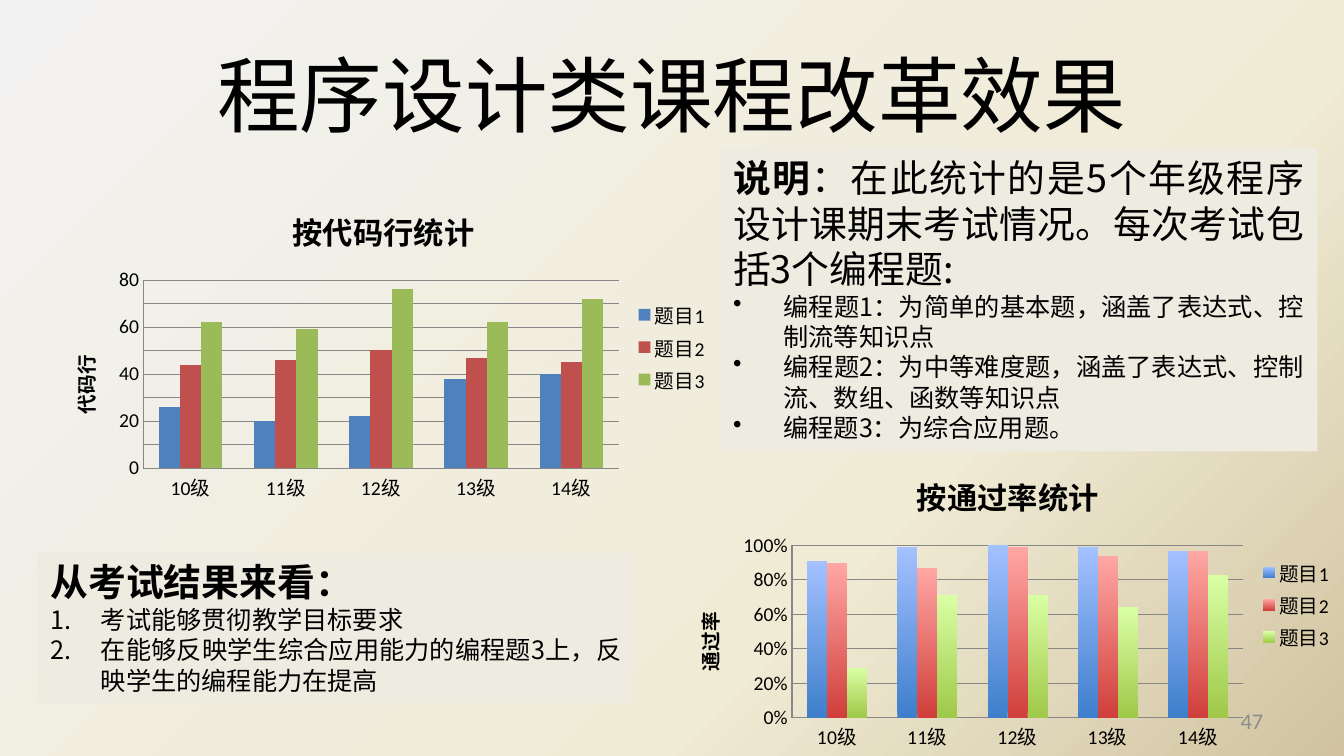
from pptx import Presentation
from pptx.chart.data import CategoryChartData
from pptx.dml.color import RGBColor
from pptx.enum.chart import XL_CHART_TYPE as ChartType, XL_LEGEND_POSITION as LegendPosition, XL_TICK_MARK as TickMark
from pptx.enum.shapes import MSO_SHAPE as Preset
from pptx.enum.text import MSO_ANCHOR as Anchor, MSO_AUTO_SIZE as AutoSize, PP_ALIGN as Align
from pptx.oxml import parse_xml
from pptx.oxml.ns import nsdecls, qn
from pptx.util import Pt

BLACK = RGBColor(0x00, 0x00, 0x00)
GREY = RGBColor(0x8C, 0x8C, 0x8C)
PANEL = RGBColor(0xEE, 0xEC, 0xE1)
SERIES_COLOURS = (RGBColor(0x4F, 0x81, 0xBD), RGBColor(0xC0, 0x50, 0x4D), RGBColor(0x9B, 0xBB, 0x59))

LATIN = "Calibri"
CHINESE = "Noto Sans CJK SC"
BULLET = '<a:buChar %s char="•"/>' % nsdecls("a")
NUMBER = '<a:buAutoNum %s type="arabicPeriod"/>' % nsdecls("a")
BACKGROUND = """<a:gradFill %s rotWithShape="1"><a:gsLst>
<a:gs pos="0"><a:srgbClr val="F2F2F2"/></a:gs>
<a:gs pos="67000"><a:srgbClr val="F0EBD5"><a:alpha val="73000"/></a:srgbClr></a:gs>
<a:gs pos="100000"><a:srgbClr val="D1C39F"/></a:gs>
</a:gsLst><a:path path="circle"><a:fillToRect r="100000" b="100000"/></a:path></a:gradFill>""" % nsdecls("a")

GRADES = ("10级", "11级", "12级", "13级", "14级")
CODE_LINES = {
    "题目1": (26, 20, 22, 38, 40),
    "题目2": (44, 46, 50, 47, 45),
    "题目3": (62, 59, 76, 62, 72),
}
PASS_RATES = {
    "题目1": (0.91, 0.99, 1, 0.99, 0.97),
    "题目2": (0.9, 0.87, 0.99, 0.94, 0.97),
    "题目3": (0.29, 0.71, 0.71, 0.64, 0.83),
}


class SlideBuilder:
    """Holds the style and the current slide, and adds its elements."""

    def __init__(self, slide):
        self.slide = slide

    def background(self):
        self.slide.background.fill.solid()
        properties = self.slide.element.find(".//" + qn("p:bgPr"))
        properties.replace(properties.find(qn("a:solidFill")), parse_xml(BACKGROUND))

    def frame(self, shape, anchor):
        frame = shape.text_frame
        frame.word_wrap = True
        frame.vertical_anchor = anchor
        frame.margin_left = frame.margin_right = Pt(9.6)
        frame.margin_top = frame.margin_bottom = Pt(4.8)
        return frame

    def run(self, paragraph, text, size, colour=BLACK, latin=LATIN, bold=False):
        run = paragraph.add_run()
        run.text = text
        font = run.font
        font.size, font.name, font.bold = Pt(size), latin, bold
        font.color.rgb = colour
        run._r.get_or_add_rPr().append(parse_xml('<a:ea %s typeface="%s"/>' % (nsdecls("a"), CHINESE)))

    def title(self, text, left, top, width, height):
        shape = self.slide.shapes.title
        shape.left, shape.top, shape.width, shape.height = Pt(left), Pt(top), Pt(width), Pt(height)
        frame = self.frame(shape, Anchor.MIDDLE)
        frame.auto_size = AutoSize.NONE
        paragraph = frame.paragraphs[0]
        paragraph.alignment = Align.CENTER
        self.run(paragraph, text, 59)

    def page_number(self, text, left, top, width, height):
        shape = self.slide.shapes.add_textbox(Pt(left), Pt(top), Pt(width), Pt(height))
        paragraph = self.frame(shape, Anchor.MIDDLE).paragraphs[0]
        paragraph.alignment = Align.RIGHT
        self.run(paragraph, text, 16, GREY)

    def panel(self, heading, intro, items, marker, left, top, width, height):
        shape = self.slide.shapes.add_shape(Preset.RECTANGLE, Pt(left), Pt(top), Pt(width), Pt(height))
        shape.shadow.inherit = False
        shape.fill.solid()
        shape.fill.fore_color.rgb = PANEL
        shape.line.fill.background()
        frame = self.frame(shape, Anchor.TOP)
        frame.auto_size = AutoSize.SHAPE_TO_FIT_TEXT
        paragraph = frame.paragraphs[0]
        paragraph.alignment = Align.JUSTIFY
        self.run(paragraph, heading, 27, latin=CHINESE, bold=True)
        if intro:
            self.run(paragraph, intro, 27, latin=CHINESE)
        for item in items:
            paragraph = frame.add_paragraph()
            paragraph.alignment = Align.JUSTIFY
            properties = paragraph._p.get_or_add_pPr()
            properties.set("marL", str(Pt(36)))
            properties.set("indent", str(Pt(-36)))
            properties.append(parse_xml(marker))
            self.run(paragraph, item, 18, latin=CHINESE)

    def chart_title(self, owner, text, size):
        owner.has_title = True
        title = owner.chart_title if hasattr(owner, "chart_title") else owner.axis_title
        run = title.text_frame.paragraphs[0].add_run()
        run.text = text
        run.font.size, run.font.name, run.font.bold = Pt(size), LATIN, True
        run.font.color.rgb = BLACK

    def column_chart(self, title, axis_title, values, number_format, left, top, width, height,
                     maximum=None, shaded=False):
        data = CategoryChartData(number_format=number_format)
        data.categories = GRADES
        for name, numbers in values.items():
            data.add_series(name, numbers)
        chart = self.slide.shapes.add_chart(
            ChartType.COLUMN_CLUSTERED, Pt(left), Pt(top), Pt(width), Pt(height), data).chart
        chart.font.size, chart.font.name = Pt(18), LATIN
        chart.font.color.rgb = BLACK
        self.chart_title(chart, title, 21.6)
        self.chart_title(chart.value_axis, axis_title, 14)
        for axis in (chart.category_axis, chart.value_axis):
            axis.major_tick_mark = axis.minor_tick_mark = TickMark.NONE
            axis.tick_labels.font.size = Pt(14)
        chart.value_axis.has_major_gridlines = True
        chart.value_axis.tick_labels.number_format = number_format
        chart.value_axis.tick_labels.number_format_is_linked = False
        if maximum is not None:
            chart.value_axis.maximum_scale = maximum
        chart.has_legend = True
        chart.legend.position = LegendPosition.RIGHT
        chart.legend.include_in_layout = False
        chart.legend.font.size = Pt(14)
        plot = chart.plots[0]
        plot.gap_width = 150
        plot.vary_by_categories = False
        if shaded:
            chart.chart_style = 26
            return
        for series, colour in zip(plot.series, SERIES_COLOURS):
            series.format.fill.solid()
            series.format.fill.fore_color.rgb = colour


def main():
    presentation = Presentation()
    presentation.slide_width, presentation.slide_height = Pt(960), Pt(540)
    builder = SlideBuilder(presentation.slides.add_slide(presentation.slide_layouts[5]))
    builder.background()
    builder.title("程序设计类课程改革效果", 48, 21.6, 864, 90)
    builder.page_number("47", 688, 500.5, 224, 28.75)
    builder.column_chart("按代码行统计", "代码行", CODE_LINES, "General", 34, 134, 480, 228)
    builder.column_chart("按通过率统计", "通过率", PASS_RATES, "0%", 480, 324, 480, 216,
                         maximum=1, shaded=True)
    builder.panel(
        "说明", "：在此统计的是5个年级程序设计课期末考试情况。每次考试包括3个编程题:",
        ("编程题1：为简单的基本题，涵盖了表达式、控制流等知识点",
         "编程题2：为中等难度题，涵盖了表达式、控制流、数组、函数等知识点",
         "编程题3：为综合应用题。"),
        BULLET, 514, 106, 427, 216.5)
    builder.panel(
        "从考试结果来看：", "",
        ("考试能够贯彻教学目标要求",
         "在能够反映学生综合应用能力的编程题3上，反映学生的编程能力在提高"),
        NUMBER, 26.5, 394.5, 427, 108)
    presentation.save("out.pptx")


if __name__ == "__main__":
    main()
